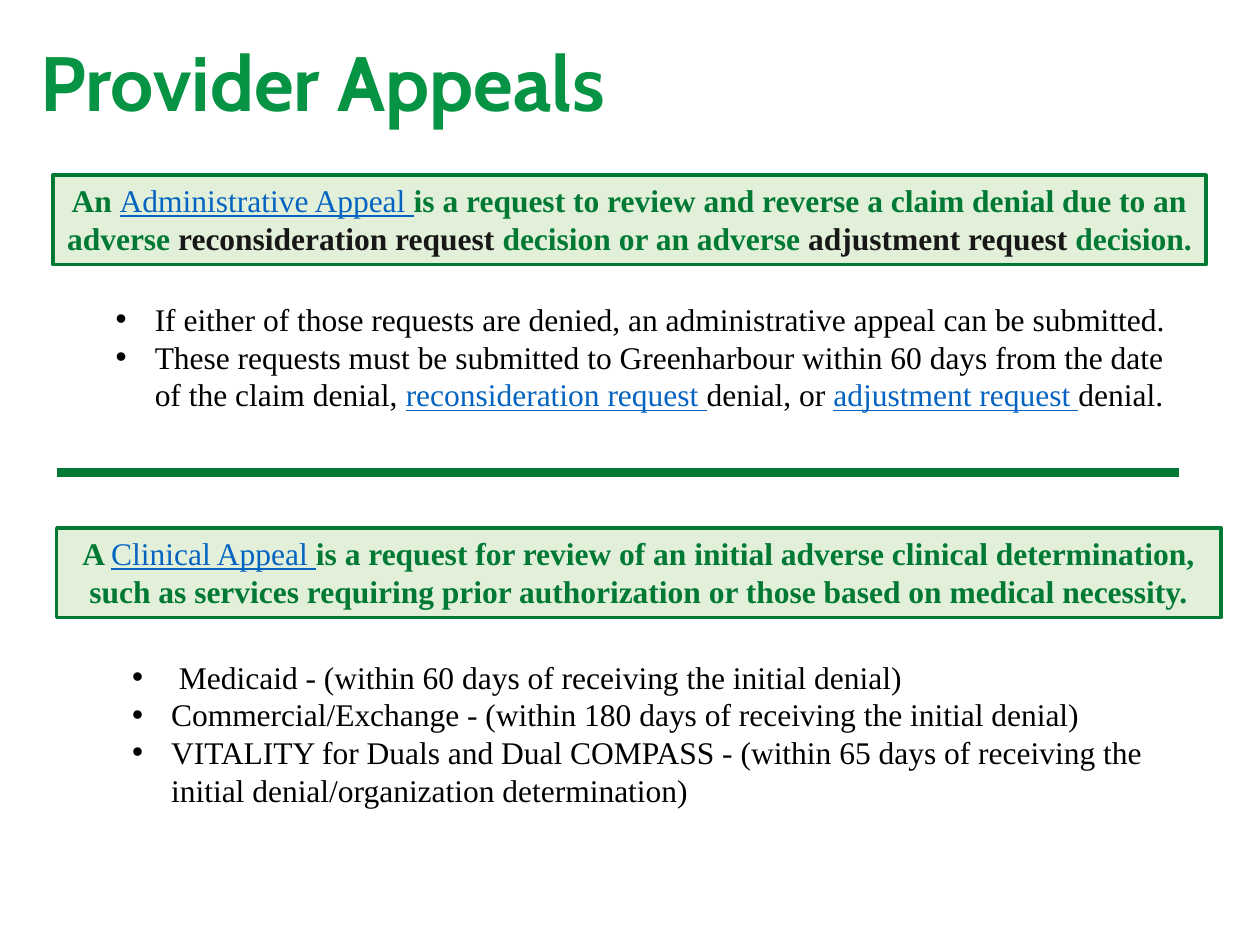
from lxml import etree
from pptx import Presentation
from pptx import util as u
from pptx.dml.color import RGBColor
from pptx.enum import shapes, text
from pptx.oxml import ns

WIDTH, HEIGHT = u.Inches(10), u.Inches(7.5)
GREEN = RGBColor(0x00, 0x79, 0x34)
TITLE_GREEN = RGBColor(0x06, 0x93, 0x43)
PALE_GREEN = RGBColor(0xE2, 0xF0, 0xD9)
LINK_BLUE = RGBColor(0x05, 0x63, 0xC1)
INK = RGBColor(0x18, 0x17, 0x17)
BLACK = RGBColor(0, 0, 0)

BODY = {"name": "Times New Roman", "size": u.Pt(18)}
STYLES = {
    "title": {"name": "Cabin", "size": u.Pt(44), "bold": True},
    "strong": {**BODY, "bold": True},
    "term": {**BODY, "bold": True},
    "plain": BODY,
    "link": {**BODY, "underline": True},
}
COLOURS = {"title": TITLE_GREEN, "strong": GREEN, "term": INK,
           "plain": BLACK, "link": LINK_BLUE}

ADMINISTRATIVE = [
    ("An ", "strong"), ("Administrative Appeal ", "link"),
    ("is a request to review and reverse a claim denial due to an adverse ", "strong"),
    ("reconsideration request ", "term"), ("decision or an adverse ", "strong"),
    ("adjustment request ", "term"), ("decision. ", "strong"),
]
CLINICAL = [
    ("A ", "strong"), ("Clinical Appeal ", "link"),
    ("is a request for review of an initial adverse clinical determination, such as "
     "services requiring prior authorization or those based on medical necessity.", "strong"),
]
ADMINISTRATIVE_RULES = [
    [("If either of those requests are denied, an administrative appeal can be submitted.",
      "plain")],
    [("These requests must be submitted to Greenharbour within 60 days from the date "
      "of the claim denial, ", "plain"),
     ("reconsideration request ", "link"), ("denial, or ", "plain"),
     ("adjustment request ", "link"), ("denial.", "plain")],
]
CLINICAL_DEADLINES = [
    [(" Medicaid - (within 60 days of receiving the initial denial)", "plain")],
    [("Commercial/Exchange - (within 180 days of receiving the initial denial)", "plain")],
    [("VITALITY for Duals and Dual COMPASS - (within 65 days of receiving the "
      "initial denial/organization determination)", "plain")],
]


def place(left, top, width, height):
    """Turn percentages of the slide's size into lengths."""
    return [round(share * side / 100) for share, side in
            zip((left, top, width, height), (WIDTH, HEIGHT) * 2)]


def set_values(target, values):
    for name, value in values.items():
        setattr(target, name, value)


def add_spans(para, spans):
    for words, style in spans:
        span = para.add_run()
        span.text = words
        set_values(span.font, STYLES[style])
        span.font.color.rgb = COLOURS[style]


def add_bullet(para):
    properties = para._p.get_or_add_pPr()
    properties.set("marL", str(u.Inches(0.81)))
    properties.set("indent", str(u.Inches(-0.31)))
    etree.SubElement(properties, ns.qn("a:buFont"), typeface="Arial")
    etree.SubElement(properties, ns.qn("a:buChar"), char="•")


def add_title(page, area, words):
    frame = page.shapes.add_textbox(*place(*area)).text_frame
    set_values(frame, {"word_wrap": True, "vertical_anchor": text.MSO_ANCHOR.MIDDLE})
    frame.paragraphs[0].line_spacing = 0.9
    add_spans(frame.paragraphs[0], [(words, "title")])


def add_bullets(page, area, items):
    frame = page.shapes.add_textbox(*place(*area)).text_frame
    set_values(frame, {"word_wrap": True, "auto_size": text.MSO_AUTO_SIZE.SHAPE_TO_FIT_TEXT})
    for index, spans in enumerate(items):
        para = frame.add_paragraph() if index else frame.paragraphs[0]
        add_bullet(para)
        add_spans(para, spans)


def add_definition(page, area, spans):
    box = page.shapes.add_shape(shapes.MSO_SHAPE.RECTANGLE, *place(*area))
    box.shadow.inherit = False
    box.fill.solid()
    box.fill.fore_color.rgb = PALE_GREEN
    box.line.color.rgb = GREEN
    box.line.width = u.Pt(2)
    set_values(box.text_frame, {"word_wrap": True,
                                "vertical_anchor": text.MSO_ANCHOR.TOP,
                                "auto_size": text.MSO_AUTO_SIZE.SHAPE_TO_FIT_TEXT})
    para = box.text_frame.paragraphs[0]
    para.alignment = text.PP_ALIGN.CENTER
    add_spans(para, spans)


def add_divider(page, left, right, level):
    line = page.shapes.add_connector(shapes.MSO_CONNECTOR.STRAIGHT,
                                     *place(left, level, right, level))
    line.line.color.rgb = GREEN
    line.line.width = u.Pt(5.5)
    etree.SubElement(line._element.spPr, ns.qn("a:effectLst"))


def main():
    deck = Presentation()
    set_values(deck, {"slide_width": WIDTH, "slide_height": HEIGHT})
    page = deck.slides.add_slide(deck.slide_layouts[6])
    add_title(page, (2.2, 2.53, 93.6, 13.33), "Provider Appeals")
    add_bullets(page, (3.2, 31.07, 91.5, 13.47), ADMINISTRATIVE_RULES)
    add_bullets(page, (4.5, 68.93, 93.6, 17.47), CLINICAL_DEADLINES)
    add_definition(page, (4.2, 18.53, 91.5, 9.47), ADMINISTRATIVE)
    add_definition(page, (4.5, 55.87, 92.4, 9.47), CLINICAL)
    add_divider(page, 4.5, 93.6, 50)
    deck.save("out.pptx")


if __name__ == "__main__":
    main()
